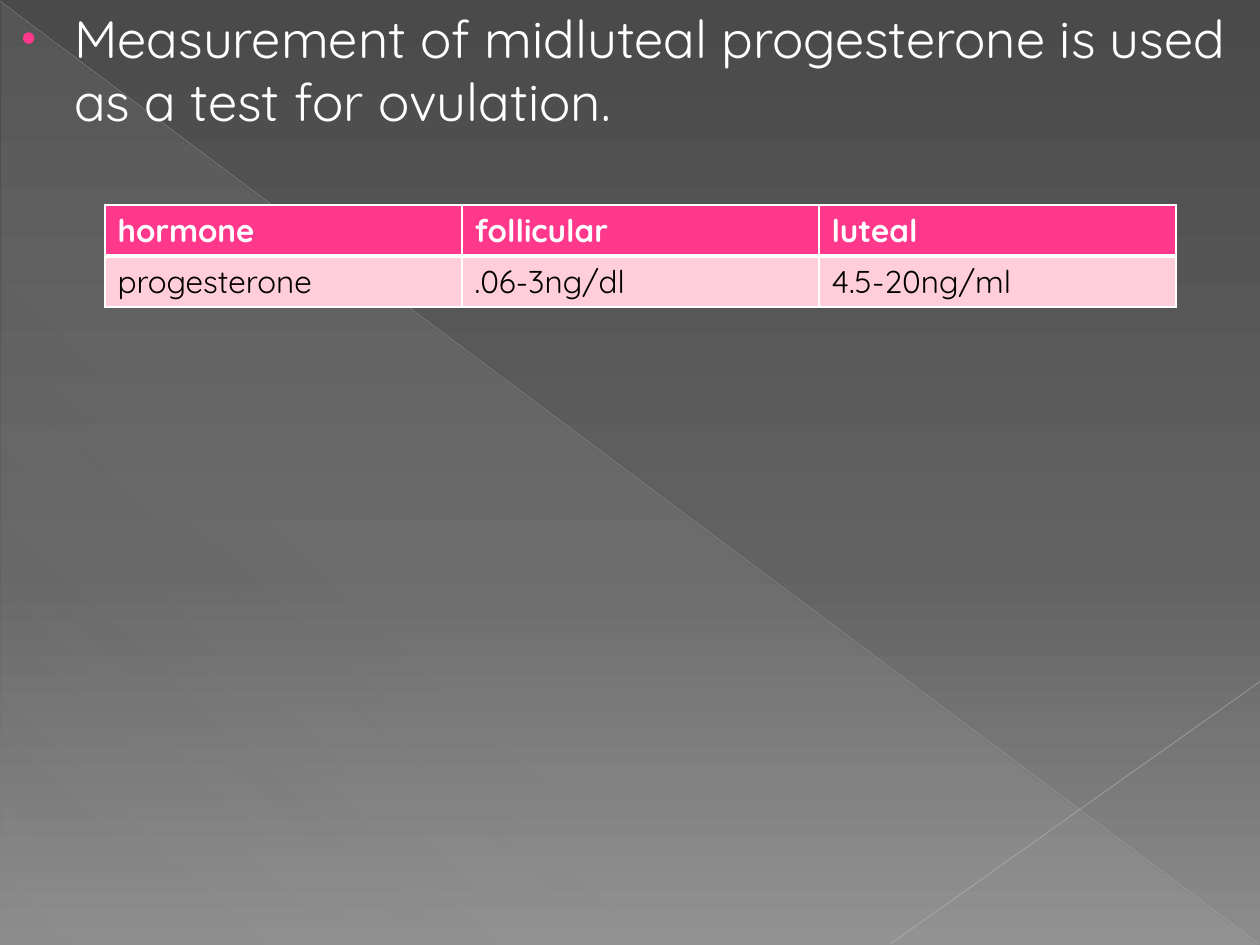
from lxml.etree import SubElement
from pptx import Presentation
from pptx.dml.color import RGBColor
from pptx.enum.shapes import MSO_CONNECTOR, MSO_SHAPE
from pptx.oxml import parse_xml
from pptx.oxml.ns import qn
from pptx.util import Pt

FONT = "Quicksand"
HEX = {
    "white": "FFFFFF", "black": "000000", "pink": "FF388C", "blush": "FFCEDA",
    "dark": "4A4A4A", "mid": "626262", "light": "8C8C8C",
    "sheen": "D2D2D2", "long": "BFBFBF", "short": "C6C6C6",
}
ROWS = [
    ["hormone", "follicular", "luteal"],
    ["progesterone", ".06-3ng/dl", "4.5-20ng/ml"],
]


def add(node, tag, **attrs):
    """Append a child element with the given attributes."""
    return SubElement(node, qn(tag), {key: str(val) for key, val in attrs.items()})


def tint(node, name, alpha=100):
    """Append a colour with its opacity in percent."""
    color = add(node, "a:srgbClr", val=HEX[name])
    if alpha < 100:
        add(color, "a:alpha", val=alpha * 1000)


def blend(item, fill, angle, stops):
    """Give an item a linear gradient of (place, colour, opacity) stops."""
    fill.solid()
    old = next(item.element.iter(qn("a:solidFill")))
    new = parse_xml(
        '<a:gradFill rotWithShape="1" '
        'xmlns:a="http://schemas.openxmlformats.org/drawingml/2006/main"/>'
    )
    group = add(new, "a:gsLst")
    for place, name, alpha in stops:
        tint(add(group, "a:gs", pos=place * 1000), name, alpha)
    add(new, "a:lin", ang=angle * 60000, scaled=0)
    old.getparent().replace(old, new)


def write(frame, text, size=18, color="white", bold=False):
    """Put formatted text in a frame and return its paragraph."""
    para = frame.paragraphs[0]
    run = para.add_run()
    run.text = text
    run.font.name = FONT
    run.font.size = Pt(size)
    run.font.bold = bold
    run.font.color.rgb = RGBColor.from_string(HEX[color])
    return para


def stroke(slide, ends, color, width, alpha):
    """Draw a thin translucent line."""
    line = slide.shapes.add_connector(MSO_CONNECTOR.STRAIGHT, *map(Pt, ends))
    line.line.width = Pt(width)
    line.line.fill.solid()
    line.line.color.rgb = RGBColor.from_string(HEX[color])
    shade = next(line.element.iter(qn("a:srgbClr")))
    add(shade, "a:alpha", val=alpha * 1000)
    add(line.element.spPr, "a:effectLst")


def scene(slide):
    """Draw the gradient backdrop with its triangle and lines."""
    back = [(0, "dark", 100), (60, "mid", 100), (100, "light", 100)]
    blend(slide, slide.background.fill, 90, back)
    wedge = slide.shapes.add_shape(
        MSO_SHAPE.RIGHT_TRIANGLE, Pt(0.7), Pt(1.4), Pt(718.6), Pt(538.6))
    wedge.shadow.inherit = False
    wedge.line.fill.background()
    sheen = [(0, "sheen", 10), (70, "sheen", 8), (100, "sheen", 1)]
    blend(wedge, wedge.fill, 133, sheen)
    stroke(slide, (0, 0.7, 719.3, 539.3), "long", 0.39, 35)
    stroke(slide, (720, 389.5, 509, 539.3), "short", 0.47, 45)


def point(slide, text):
    """Write the bulleted statement."""
    box = slide.shapes.add_textbox(0, 0, Pt(720), Pt(540))
    box.text_frame.word_wrap = True
    para = write(box.text_frame, text, size=30)
    para.space_before = Pt(6)
    props = para._p.get_or_add_pPr()
    props.set("marL", str(Pt(35.3)))
    props.set("indent", str(Pt(-30.2)))
    tint(add(props, "a:buClr"), "pink")
    add(props, "a:buSzPct", val=80000)
    add(props, "a:buFont", typeface="Arial")
    add(props, "a:buChar", char="•")


def border(cell, base):
    """Rule a cell in white, with its own width at the base."""
    props = cell._tc.get_or_add_tcPr()
    sides = zip(("a:lnL", "a:lnR", "a:lnT", "a:lnB"), (1, 1, 1, base))
    for spot, (tag, width) in enumerate(sides):
        edge = add(props, tag, w=Pt(width))
        tint(add(edge, "a:solidFill"), "white")
        props.insert(spot, edge)


def levels(slide):
    """Build the hormone table."""
    grid = slide.shapes.add_table(
        len(ROWS), len(ROWS[0]), Pt(60), Pt(117), Pt(612), Pt(58.4)).table
    for r, row in enumerate(ROWS):
        head = r == 0
        for c, text in enumerate(row):
            cell = grid.cell(r, c)
            cell.fill.solid()
            shade = HEX["pink" if head else "blush"]
            cell.fill.fore_color.rgb = RGBColor.from_string(shade)
            border(cell, 3 if head else 1)
            write(cell.text_frame, text, color="white" if head else "black", bold=head)


def main():
    """Build and save the slide."""
    deck = Presentation()
    deck.slide_width, deck.slide_height = Pt(720), Pt(540)
    slide = deck.slides.add_slide(deck.slide_layouts[6])
    scene(slide)
    point(slide, "Measurement of midluteal progesterone is used as a test for ovulation.")
    levels(slide)
    deck.save("out.pptx")


if __name__ == "__main__":
    main()
